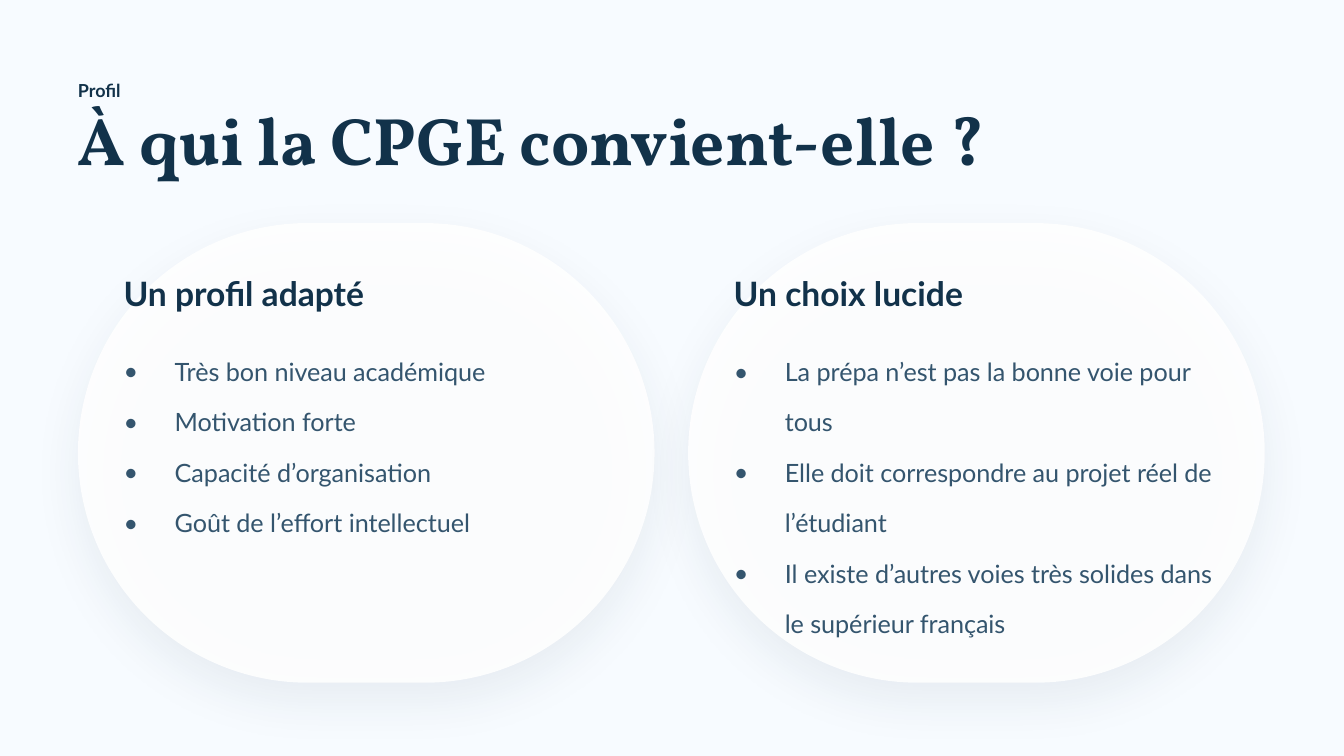
import pptx
import pptx.util
import pptx.dml.color
import pptx.enum.shapes
import pptx.enum.text
import pptx.oxml.ns
from lxml import etree

Inches = pptx.util.Inches
Pt = pptx.util.Pt
RGBColor = pptx.dml.color.RGBColor
qn = pptx.oxml.ns.qn

BACKGROUND = RGBColor(0xF7, 0xFB, 0xFF)
WHITE = RGBColor(0xFF, 0xFF, 0xFF)
NAVY = RGBColor(0x12, 0x32, 0x4A)
SLATE = RGBColor(0x34, 0x55, 0x6E)

MARGIN = 0.58
CARD_STEP = 4.54
CARD_PADDING = 0.34
BULLET_INDENT = 0.38

CARDS = [
    ("Un profil adapté", 1.5, [
        "Très bon niveau académique",
        "Motivation forte",
        "Capacité d’organisation",
        "Goût de l’effort intellectuel",
    ]),
    ("Un choix lucide", 2.25, [
        "La prépa n’est pas la bonne voie pour tous",
        "Elle doit correspondre au projet réel de l’étudiant",
        "Il existe d’autres voies très solides dans le supérieur français",
    ]),
]


def set_alpha(color, percent):
    etree.SubElement(color, qn("a:alpha"), val=str(percent * 1000))


def add_soft_shadow(sp):
    sp.shadow.inherit = False
    effects = sp._element.spPr.find(qn("a:effectLst"))
    shadow = etree.SubElement(
        effects, qn("a:outerShdw"), blurRad=str(Pt(25.5)), dist=str(Pt(10.5)),
        dir=str(90 * 60000), algn="ctr", rotWithShape="0")
    color = etree.SubElement(shadow, qn("a:srgbClr"), val=str(NAVY))
    set_alpha(color, 7)


def add_panel(slide, left):
    sp = slide.shapes.add_shape(
        pptx.enum.shapes.MSO_SHAPE.ROUNDED_RECTANGLE,
        Inches(left), Inches(1.66), Inches(4.29), Inches(3.42))
    sp.adjustments[0] = 0.64
    sp.fill.solid()
    sp.fill.fore_color.rgb = WHITE
    set_alpha(sp._element.spPr.find(qn("a:solidFill"))[0], 88)
    sp.line.fill.background()
    add_soft_shadow(sp)


def add_bullet(p):
    pPr = p._p.get_or_add_pPr()
    pPr.set("marL", str(Inches(BULLET_INDENT)))
    pPr.set("indent", str(-Inches(BULLET_INDENT)))
    etree.SubElement(pPr, qn("a:buSzPct"), val="100000")
    etree.SubElement(pPr, qn("a:buFont"), typeface="Lato")
    etree.SubElement(pPr, qn("a:buChar"), char="•")


def add_text(slide, box, lines, size, spacing, color=NAVY, font="Lato",
             bold=True, bullets=False):
    sp = slide.shapes.add_textbox(*(Inches(v) for v in box))
    tf = sp.text_frame
    tf.word_wrap = True
    tf.auto_size = pptx.enum.text.MSO_AUTO_SIZE.NONE
    tf.margin_left = tf.margin_right = tf.margin_top = tf.margin_bottom = 0
    tf.text = "\n".join(lines)
    for p in tf.paragraphs:
        if bullets:
            add_bullet(p)
        p.line_spacing = Pt(spacing)
        for r in p.runs:
            r.font.name = font
            r.font.size = Pt(size)
            r.font.bold = bold
            r.font.color.rgb = color


def add_card_text(slide, left, heading, height, items):
    add_text(slide, (left, 2, 3.7, 0.33), [heading], 18, 24)
    add_text(slide, (left, 2.5, 3.62, height), items, 13.5, 27,
             color=SLATE, bold=False, bullets=True)


def main():
    prs = pptx.Presentation()
    prs.slide_width = Inches(10)
    prs.slide_height = Inches(10 * 9 / 16)
    slide = prs.slides.add_slide(prs.slide_layouts[6])
    slide.background.fill.solid()
    slide.background.fill.fore_color.rgb = BACKGROUND

    for i in range(len(CARDS)):
        add_panel(slide, MARGIN + i * CARD_STEP)
    add_text(slide, (MARGIN, 0.55, 9.01, 0.2), ["Profil"], 9.6, 14.4)
    add_text(slide, (MARGIN, 0.83, 9.01, 0.5),
             ["À qui la CPGE convient-elle ?"], 36, 36, font="Vollkorn")
    for i, (heading, height, items) in enumerate(CARDS):
        left = MARGIN + CARD_PADDING + i * CARD_STEP
        add_card_text(slide, left, heading, height, items)

    prs.save("out.pptx")


if __name__ == "__main__":
    main()
